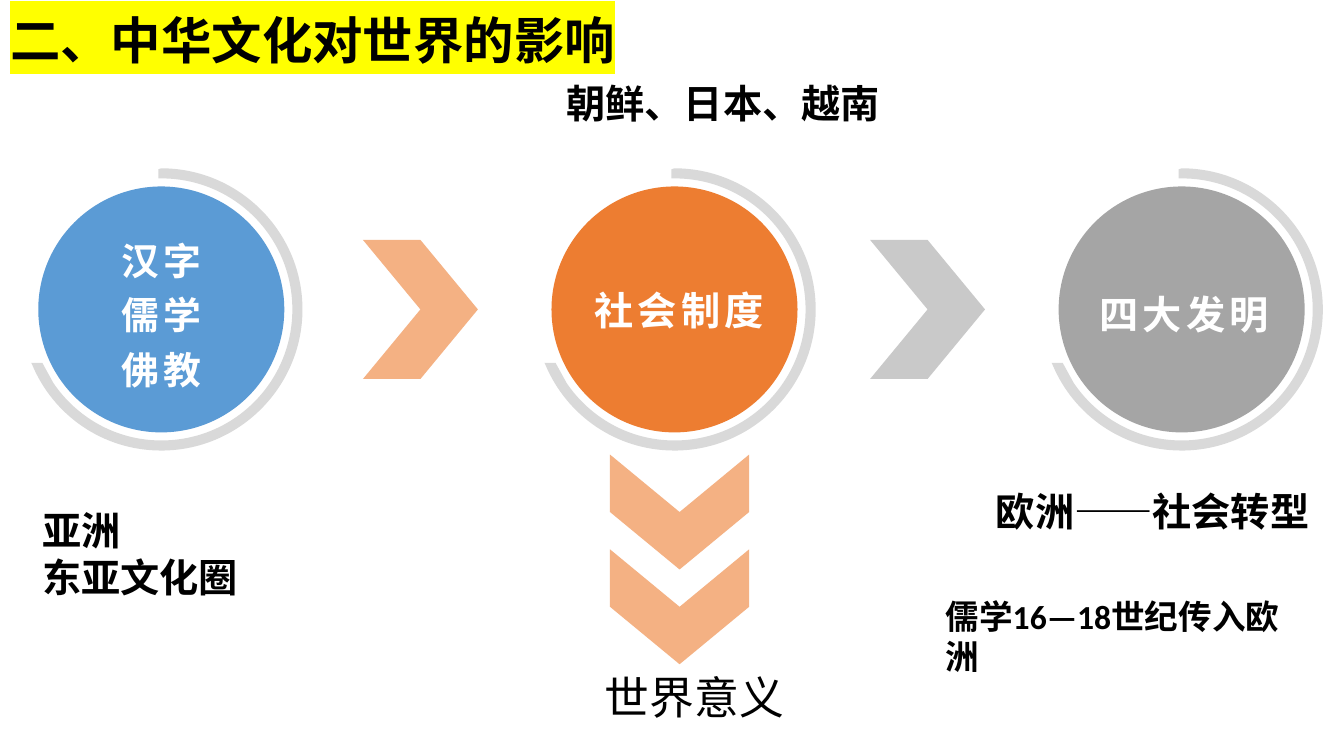
"""Builds the slide on the influence of Chinese culture on the world."""
import pptx
import pptx.dml.color
import pptx.enum.shapes
import pptx.enum.text
import pptx.oxml
import pptx.oxml.ns
import pptx.util

Inches = pptx.util.Inches
ALIGN = pptx.enum.text.PP_ALIGN
ANCHOR = pptx.enum.text.MSO_ANCHOR
FIT = pptx.enum.text.MSO_AUTO_SIZE
SHAPE = pptx.enum.shapes.MSO_SHAPE
HEADING_FONT = "Noto Sans CJK SC"
BODY_FONT = "Calibri"
NAMES = pptx.oxml.ns.nsdecls("a")


def color(value):
    """Turn a hex string into a colour."""
    return pptx.dml.color.RGBColor.from_string(value)


def write(box, text, size=28, font=BODY_FONT, ink="000000", bold=True, align=ALIGN.LEFT,
          anchor=ANCHOR.TOP, fit=FIT.SHAPE_TO_FIT_TEXT, leading=1.0, spacing=0, highlight=None):
    """Fill a box with one formatted paragraph per line of text."""
    frame = box.text_frame
    frame.word_wrap, frame.auto_size, frame.vertical_anchor = True, fit, anchor
    for number, line in enumerate(text.split("\n")):
        para = frame.add_paragraph() if number else frame.paragraphs[0]
        para.alignment, para.line_spacing = align, leading
        span = para.add_run()
        span.text = line
        span.font.size, span.font.bold = pptx.util.Pt(size), bold
        span.font.color.rgb = color(ink)
        span.font.name = font
        props = span.font._element
        props.set("lang", "zh-CN")
        if spacing:
            props.set("spc", str(spacing * 100))
        if font == HEADING_FONT:
            latin = props.find(pptx.oxml.ns.qn("a:latin"))
            latin.addnext(pptx.oxml.parse_xml(f'<a:ea {NAMES} typeface="{font}"/>'))
        if highlight:
            fill = props.find(pptx.oxml.ns.qn("a:solidFill"))
            fill.addnext(pptx.oxml.parse_xml(
                f'<a:highlight {NAMES}><a:srgbClr val="{highlight}"/></a:highlight>'))


class Slide:
    """Holds the style and the current page."""

    ring_color = "D9D9D9"
    disc_size = 2.44
    chevron_size = (1.14, 1.38)
    ring_start = (0, -1.4)
    ring_pieces = (
        ((0.77, -1.4), (1.4, -0.77), (1.4, 0)),
        ((1.4, 0.77), (0.77, 1.4), (0, 1.4)),
        ((-0.58, 1.4), (-1.07, 1.05), (-1.28, 0.55)),
        ((-1.29, 0.53),),
        ((-1.18, 0.53),),
        ((-1.07, 0.73),),
        ((-0.84, 1.07), (-0.45, 1.3), (0, 1.3)),
        ((0.72, 1.3), (1.3, 0.72), (1.3, 0)),
        ((1.3, -0.72), (0.72, -1.3), (0, -1.3)),
        ((-0.03, -1.3),),
        ((-0.03, -1.39),),
    )

    def __init__(self, deck):
        """Add a title-only page to the deck."""
        self.page = deck.slides.add_slide(deck.slide_layouts[5])

    def paint(self, shape, fill):
        """Give a shape a plain fill."""
        shape.shadow.inherit = False
        shape.fill.solid()
        shape.fill.fore_color.rgb = color(fill)
        shape.line.fill.background()

    def title(self, text, left, top, width, height, **style):
        """Place and format the title."""
        box = self.page.shapes.title
        box.left, box.top = Inches(left), Inches(top)
        box.width, box.height = Inches(width), Inches(height)
        write(box, text, **style)

    def label(self, text, left, top, width, height, **style):
        """Add a text box."""
        box = self.page.shapes.add_textbox(
            Inches(left), Inches(top), Inches(width), Inches(height))
        write(box, text, **style)

    def disc(self, left, top, fill):
        """Add a disc with an open ring around it."""
        size = Inches(self.disc_size)
        self.paint(self.page.shapes.add_shape(
            SHAPE.OVAL, Inches(left), Inches(top), size, size), fill)
        self.ring(left + self.disc_size / 2, top + self.disc_size / 2)

    def ring(self, middle_x, middle_y):
        """Add an open ring, turning each three-point piece into a curve."""
        def place(point):
            """Move a ring point to the page."""
            return Inches(middle_x + point[0]), Inches(middle_y + point[1])

        builder = self.page.shapes.build_freeform(*place(self.ring_start))
        builder.add_line_segments(
            [place(point) for piece in self.ring_pieces for point in piece], close=True)
        shape = builder.convert_to_shape()
        lines = iter(list(shape._element.iter(pptx.oxml.ns.qn("a:lnTo"))))
        for piece in self.ring_pieces:
            parts = [next(lines) for point in piece]
            if len(parts) == 3:
                curve = pptx.oxml.parse_xml(f"<a:cubicBezTo {NAMES}/>")
                parts[0].addprevious(curve)
                for part in parts:
                    curve.append(part[0])
                    part.getparent().remove(part)
        self.paint(shape, self.ring_color)

    def chevron(self, left, top, fill, rotation=0):
        """Add a chevron."""
        width, height = self.chevron_size
        shape = self.page.shapes.add_shape(
            SHAPE.CHEVRON, Inches(left), Inches(top), Inches(width), Inches(height))
        shape.rotation = rotation
        self.paint(shape, fill)


def main():
    """Build and save the deck."""
    deck = pptx.Presentation()
    deck.slide_width, deck.slide_height = Inches(13.33), Inches(7.5)
    slide = Slide(deck)
    slide.title("二、中华文化对世界的影响", 0, 0.04, 8.02, 0.71,
                size=36, font=HEADING_FONT, highlight="FFFF00")

    for left, fill in ((0.38, "5B9BD5"), (5.47, "ED7D31"), (10.5, "A5A5A5")):
        slide.disc(left, 1.85, fill)
    for left, fill in ((3.6, "F4B183"), (8.63, "C9C9C9")):
        slide.chevron(left, 2.38, fill)
    for top in (4.39, 5.33):
        slide.chevron(6.17, top, "F4B183", rotation=90)

    disc_style = dict(font=HEADING_FONT, ink="FFFFFF", align=ALIGN.CENTER,
                      anchor=ANCHOR.MIDDLE, fit=FIT.NONE, spacing=3)
    slide.label("汉字\n儒学\n佛教", 0.71, 2.34, 1.79, 1.47, size=27, leading=1.2, **disc_style)
    slide.label("社会制度", 5.45, 2.34, 2.57, 1.47, **disc_style)
    slide.label("四大发明", 10.49, 2.38, 2.51, 1.47, **disc_style)

    slide.label("世界意义", 5.9, 6.59, 2.73, 0.64, size=32, bold=False)
    slide.label("亚洲\n东亚文化圈", 0.32, 4.97, 2.53, 1.51)
    slide.label("朝鲜、日本、越南", 5.52, 0.74, 3.49, 0.57)
    slide.label("欧洲——社会转型", 9.78, 4.79, 3.49, 0.57)
    slide.label("儒学16—18世纪传入欧洲", 9.28, 5.86, 3.84, 0.5, size=24)
    deck.save("out.pptx")


if __name__ == "__main__":
    main()
